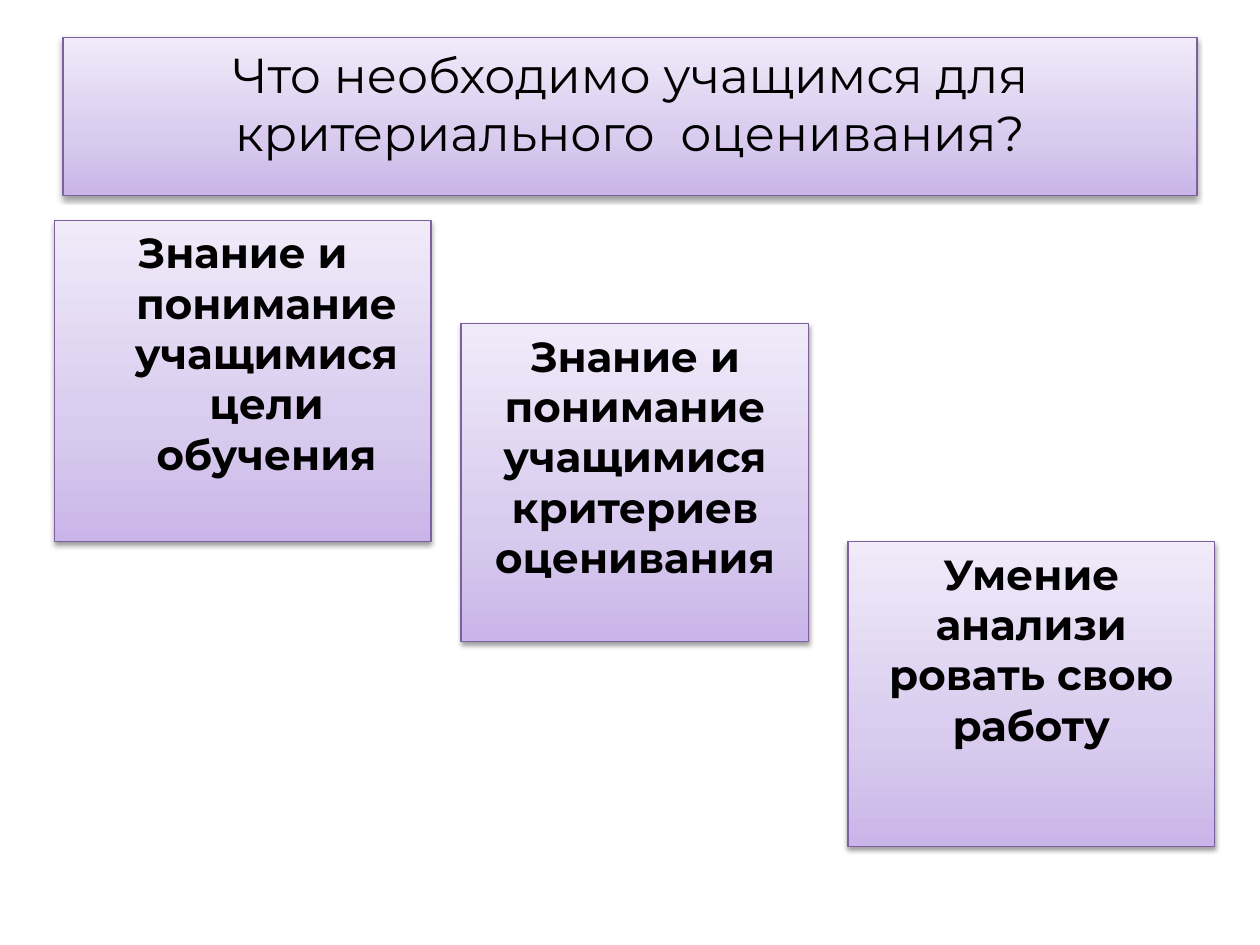
import dataclasses

import lxml.etree
import pptx
import pptx.dml.color
import pptx.enum.shapes
import pptx.enum.text
import pptx.oxml.ns
import pptx.util

Inches = pptx.util.Inches


@dataclasses.dataclass(frozen=True)
class Theme:
    """Colours, type sizes and effects of the slide."""

    font: str = "Montserrat"
    ink: str = "000000"
    edge: str = "7D60A0"
    fade: tuple = ((0, "C9B5E8"), (35, "D8CBEE"), (100, "F0EAF9"))
    head: int = 28
    body: int = 24
    blur: float = 3.1
    drop: float = 1.6
    shade: int = 38


class Deck:
    """Holds the theme and the current slide."""

    def __init__(self, theme, slide):
        """Keep the theme and the slide."""
        self.theme = theme
        self.slide = slide

    def node(self, root, tag, **attrs):
        """Add a DrawingML child element."""
        values = {key: str(value) for key, value in attrs.items()}
        return lxml.etree.SubElement(root, pptx.oxml.ns.qn(tag), values)

    def tint(self, shape):
        """Fill the shape with the rising gradient."""
        shape.fill.gradient()
        shape.fill.gradient_angle = 90
        stops = shape._element.spPr.find(".//" + pptx.oxml.ns.qn("a:gsLst"))
        for stop in list(stops):
            stops.remove(stop)
        for place, color in self.theme.fade:
            stop = self.node(stops, "a:gs", pos=place * 1000)
            self.node(stop, "a:srgbClr", val=color)

    def cast(self, shape):
        """Give the shape a soft shadow below."""
        shape.shadow.inherit = False
        effects = shape._element.spPr.find(pptx.oxml.ns.qn("a:effectLst"))
        shadow = self.node(
            effects, "a:outerShdw",
            blurRad=int(pptx.util.Pt(self.theme.blur)),
            dist=int(pptx.util.Pt(self.theme.drop)),
            dir=90 * 60000, rotWithShape=0,
        )
        color = self.node(shadow, "a:srgbClr", val=self.theme.ink)
        self.node(color, "a:alpha", val=self.theme.shade * 1000)

    def label(self, para, text, size, bold):
        """Add one centred run to a paragraph."""
        para.alignment = pptx.enum.text.PP_ALIGN.CENTER
        run = para.add_run()
        run.text = text
        run.font.name = self.theme.font
        run.font.size = pptx.util.Pt(size)
        run.font.bold = bold
        run.font.color.rgb = pptx.dml.color.RGBColor.from_string(self.theme.ink)

    def card(self, box, lines, size, bold=True, hang=0):
        """Draw a shaded card with text at its top."""
        shape = self.slide.shapes.add_shape(
            pptx.enum.shapes.MSO_SHAPE.RECTANGLE, *map(Inches, box)
        )
        self.tint(shape)
        shape.line.color.rgb = pptx.dml.color.RGBColor.from_string(self.theme.edge)
        shape.line.width = pptx.util.Pt(0.75)
        self.cast(shape)
        frame = shape.text_frame
        frame.word_wrap = True
        frame.vertical_anchor = pptx.enum.text.MSO_ANCHOR.TOP
        for index, text in enumerate(lines):
            para = frame.add_paragraph() if index else frame.paragraphs[0]
            self.label(para, text, size, bold)
            if hang:
                props = para._p.get_or_add_pPr()
                props.set("marL", str(Inches(hang)))
                props.set("indent", str(-Inches(hang)))


def main():
    """Build and save the slide."""
    show = pptx.Presentation()
    show.slide_width, show.slide_height = Inches(10), Inches(7.5)
    theme = Theme()
    deck = Deck(theme, show.slides.add_slide(show.slide_layouts[6]))
    title = "Что необходимо учащимся для критериального  оценивания?"
    deck.card((0.5, 0.3, 9, 1.25), [title], theme.head, bold=False)
    cards = (
        ((3.66, 2.57, 2.76, 2.52),
         ["Знание и понимание учащимися критериев оценивания"], 0),
        ((6.73, 4.3, 2.91, 2.42), ["Умение анализи", "ровать свою работу"], 0),
        ((0.43, 1.75, 2.99, 2.55),
         ["Знание и понимание учащимися цели обучения"], 0.38),
    )
    for box, lines, hang in cards:
        deck.card(box, lines, theme.body, hang=hang)
    show.save("out.pptx")


if __name__ == "__main__":
    main()
